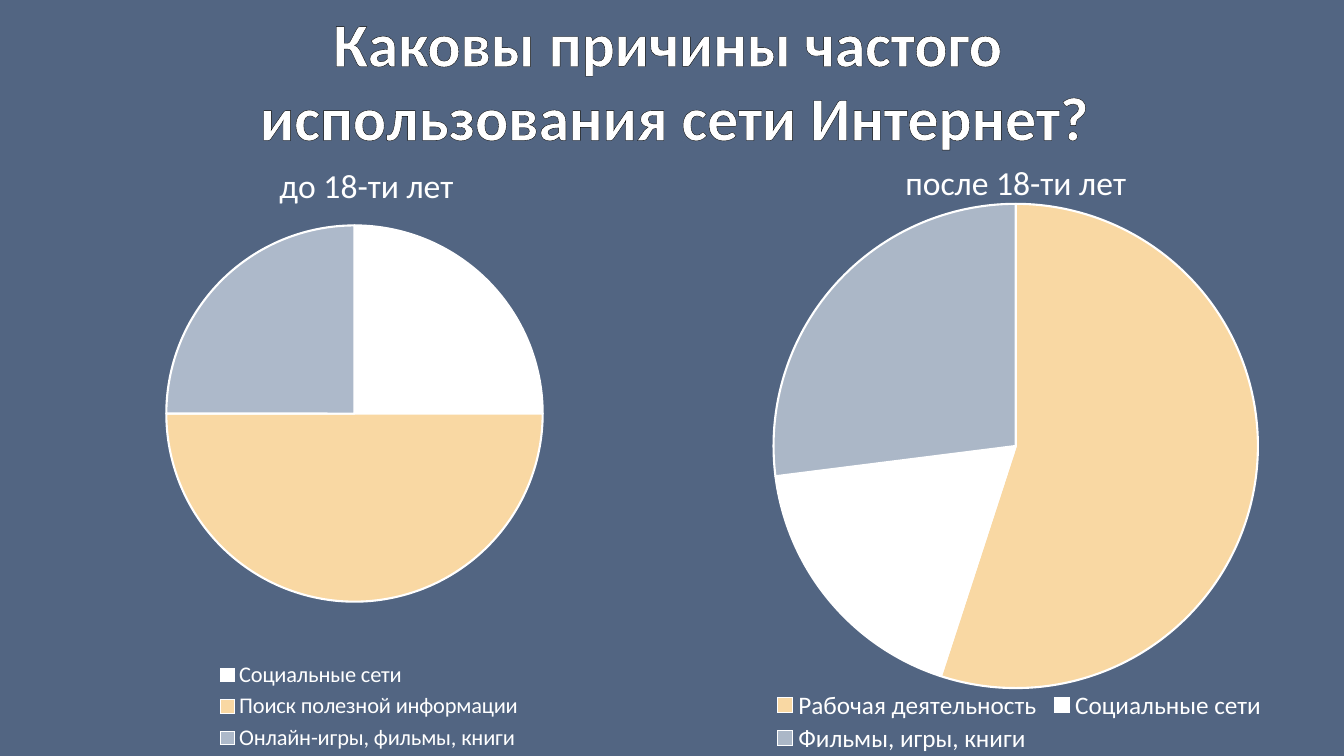
from pptx import Presentation
from pptx.chart.data import CategoryChartData
from pptx.dml.color import RGBColor
from pptx.enum.chart import XL_CHART_TYPE, XL_LEGEND_POSITION
from pptx.enum.text import MSO_AUTO_SIZE, PP_ALIGN
from pptx.oxml import parse_xml
from pptx.oxml.ns import nsdecls, qn
from pptx.util import Inches, Pt

FONT = "Calibri"
WHITE, SAND, BACK = "FFFFFF", "F9D8A3", "526582"
HEADING = ["Каковы причины частого ", "использования сети Интернет?"]
PIES = [
    dict(title="до 18-ти лет", box=(0.67, 1.38, 5.93, 6.12),
         slices=[("Социальные сети", 25, WHITE),
                 ("Поиск полезной информации", 50, SAND),
                 ("Онлайн-игры, фильмы, книги", 25, "ADB9CA")],
         plot=(0, 0.14, 0.96, 0.61), legend=(0.24, 0.84, 0.53, 0.16),
         legend_size=16, explosion=0),
    dict(title="после 18-ти лет", box=(6.46, 1.35, 7.23, 6.15),
         slices=[("Рабочая деятельность", 55, SAND),
                 ("Социальные сети", 18, WHITE),
                 ("Фильмы, игры, книги", 27, "ABB7C7")],
         plot=(0, 0, 1, 1), legend=(0.16, 0.89, 0.69, 0.11),
         legend_size=18, explosion=28),
]


def rgb(value):
    return RGBColor.from_string(value)


def style(font, size, bold=False):
    font.name, font.size, font.bold = FONT, Pt(size), bold
    font.color.rgb = rgb(WHITE)


def layout(box, inner=False):
    target = '<c:layoutTarget val="inner"/>' if inner else ""
    sizes = "".join(f'<c:{k} val="{v}"/>' for k, v in zip("xywh", box))
    return parse_xml(
        f'<c:layout {nsdecls("c")}><c:manualLayout>{target}'
        f'<c:xMode val="edge"/><c:yMode val="edge"/>{sizes}'
        '</c:manualLayout></c:layout>')


def place(element, index, box, inner=False):
    for old in element.findall(qn("c:layout")):
        element.remove(old)
    element.insert(index, layout(box, inner))


def explosion(value):
    return parse_xml(f'<c:explosion {nsdecls("c")} val="{value}"/>')


def add_heading(slide):
    sp = slide.shapes.add_textbox(Inches(2.45), 0, Inches(8.49), Inches(1.58))
    tf = sp.text_frame
    tf.word_wrap = False
    tf.auto_size = MSO_AUTO_SIZE.SHAPE_TO_FIT_TEXT
    for i, line in enumerate(HEADING):
        p = tf.paragraphs[0] if i == 0 else tf.add_paragraph()
        p.alignment = PP_ALIGN.CENTER
        r = p.add_run()
        r.text = line
        style(r.font, 44, True)
        r.font._element.insert(0, parse_xml(
            f'<a:ln {nsdecls("a")} w="{Pt(0.75)}"><a:solidFill>'
            '<a:srgbClr val="000000"/></a:solidFill></a:ln>'))


def add_pie(slide, pie):
    data = CategoryChartData()
    names, values, colors = zip(*pie["slices"])
    data.categories = names
    data.add_series(pie["title"], values)
    chart = slide.shapes.add_chart(
        XL_CHART_TYPE.PIE, *map(Inches, pie["box"]), data).chart
    style(chart.font, 10)

    chart.has_title = True
    p = chart.chart_title.text_frame.paragraphs[0]
    r = p.add_run()
    r.text = pie["title"]
    style(r.font, 24)

    chart.has_legend = True
    legend = chart.legend
    legend.position = XL_LEGEND_POSITION.BOTTOM
    legend.include_in_layout = False
    style(legend.font, pie["legend_size"])
    place(legend._element, 1, pie["legend"])

    plot = chart.plots[0]
    plot.vary_by_categories = True
    place(plot._element.getparent(), 0, pie["plot"], True)
    series = plot.series[0]
    for i, color in enumerate(colors):
        fmt = series.points[i].format
        fmt.fill.solid()
        fmt.fill.fore_color.rgb = rgb(color)
        fmt.line.color.rgb = rgb(WHITE)
        fmt.line.width = Pt(1.5)
    if pie["explosion"]:
        points = series._element.findall(qn("c:dPt"))
        points[0].addprevious(explosion(pie["explosion"]))
        for point in points:
            point.find(qn("c:spPr")).addprevious(explosion(0))


def main():
    prs = Presentation()
    prs.slide_width, prs.slide_height = Inches(13.33), Inches(7.5)
    s = prs.slides.add_slide(prs.slide_layouts[6])
    s.background.fill.solid()
    s.background.fill.fore_color.rgb = rgb(BACK)
    add_heading(s)
    for pie in PIES:
        add_pie(s, pie)
    prs.save("out.pptx")


if __name__ == "__main__":
    main()
